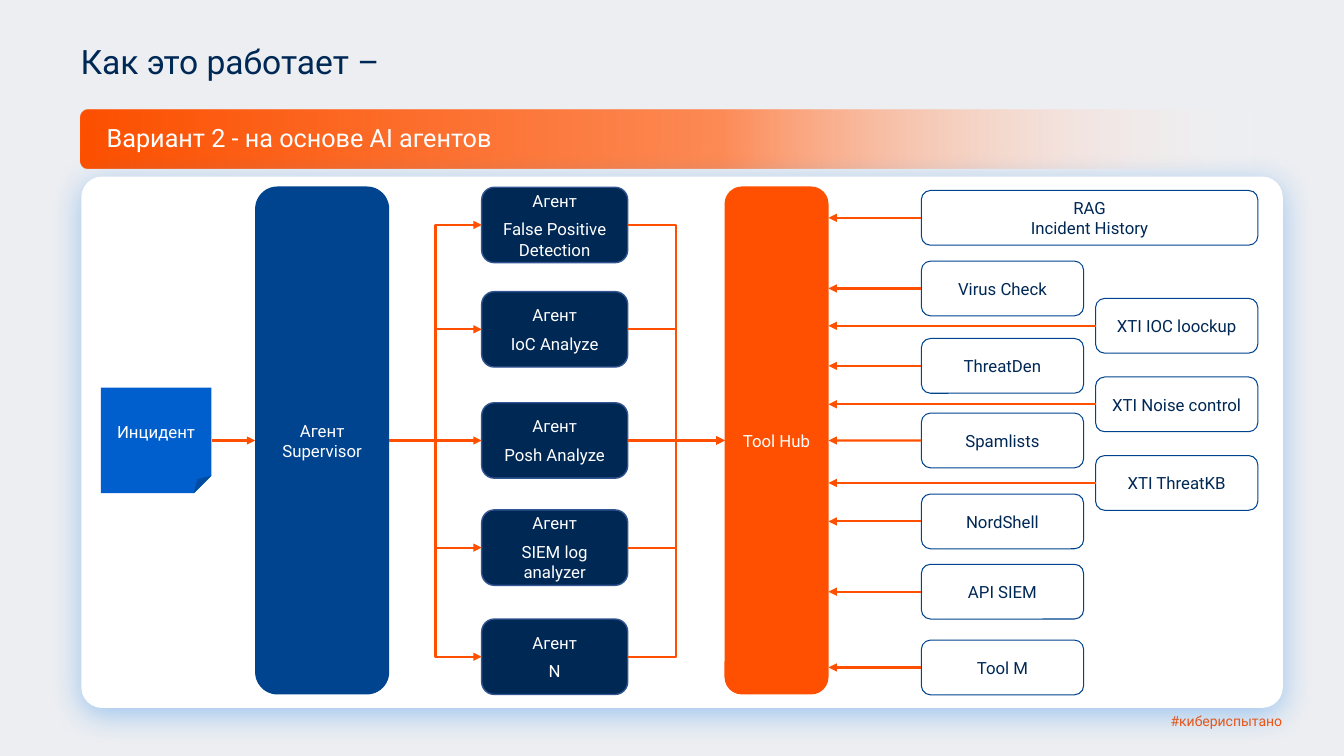
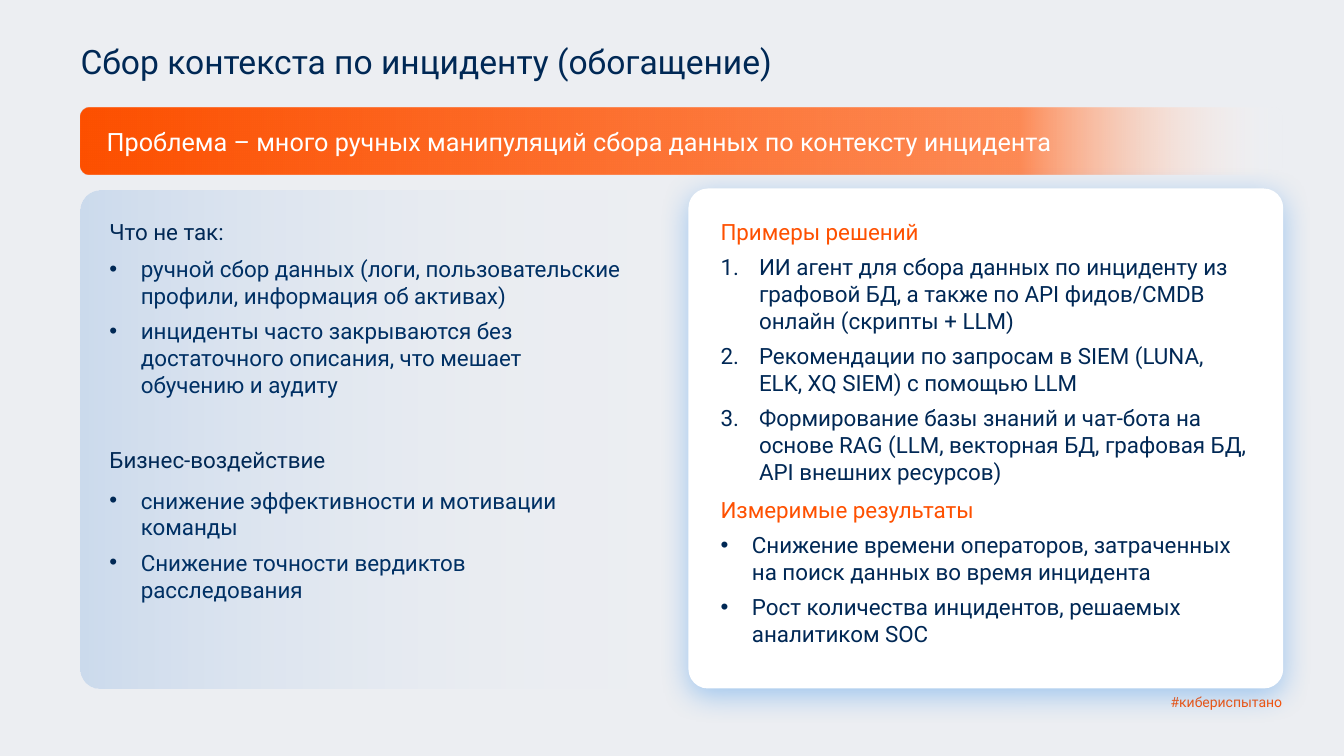
from lxml.etree import SubElement
from pptx import Presentation
from pptx.dml.color import RGBColor
from pptx.enum.shapes import MSO_CONNECTOR as CONN, MSO_SHAPE as SHAPE
from pptx.enum.text import MSO_ANCHOR as ANCHOR, PP_ALIGN as ALIGN
from pptx.oxml.ns import qn
from pptx.util import Cm, Pt

FONT = "Roboto"
ORANGE, PEACH, WHITE = "FE5000", "FE8A55", "FFFFFF"
NAVY, INK, BLUE, BRIGHT = "002855", "003064", "00438F", "005FCC"
rgb = RGBColor.from_string


def box(s, x, y, w, h, text="", shape=None, fill=None, line=None, line_w=1, adj=None,
        grad=None, glow=False, size=12, color=NAVY, align=ALIGN.LEFT, before=0, after=0,
        spacing=None, bullet=None, indent=0.79, lead=None):
    """Add a shape, or a text box when no shape is given; lead colours an unbulleted first line."""
    frame = Cm(x), Cm(y), Cm(w), Cm(h)
    if shape is None:
        sp = s.shapes.add_textbox(*frame)
    else:
        sp = s.shapes.add_shape(shape, *frame)
        sp.shadow.inherit = False
        sp.text_frame.vertical_anchor = ANCHOR.MIDDLE
        if adj:
            sp.adjustments[0] = adj
        if line:
            sp.line.color.rgb = rgb(line)
            sp.line.width = Pt(line_w)
        else:
            sp.line.fill.background()
        if grad:
            sp.fill.gradient()
            sp.fill.gradient_angle = 0
            stops = sp._element.spPr.find(qn("a:gradFill")).find(qn("a:gsLst"))
            stops.clear()
            for pos, tint, alpha in grad:
                gs = SubElement(stops, qn("a:gs"), pos=str(pos * 1000))
                clr = SubElement(gs, qn("a:srgbClr"), val=tint)
                SubElement(clr, qn("a:alpha"), val=str(alpha * 1000))
        else:
            sp.fill.solid()
            sp.fill.fore_color.rgb = rgb(fill)
        if glow:
            effects = sp._element.spPr.find(qn("a:effectLst"))
            shadow = SubElement(effects, qn("a:outerShdw"), blurRad=str(Pt(21.3)),
                                dist=str(Pt(5.2)), dir="5400000", algn="t", rotWithShape="0")
            clr = SubElement(shadow, qn("a:srgbClr"), val="2B8AEA")
            SubElement(clr, qn("a:alpha"), val="40000")

    tf = sp.text_frame
    tf.word_wrap = True
    for i, words in enumerate(text.split("\n") if text else []):
        p = tf.add_paragraph() if i else tf.paragraphs[0]
        is_lead = lead and i == 0
        if bullet and not is_lead:
            pPr = p._p.get_or_add_pPr()
            pPr.set("marL", str(Cm(indent)))
            pPr.set("indent", str(-Cm(indent)))
            SubElement(SubElement(pPr, qn("a:buClr")), qn("a:srgbClr"), val=NAVY)
            if bullet == "1.":
                SubElement(pPr, qn("a:buFont"), typeface="+mj-lt")
                SubElement(pPr, qn("a:buAutoNum"), type="arabicPeriod")
            else:
                SubElement(pPr, qn("a:buFont"), typeface="Arial")
                SubElement(pPr, qn("a:buChar"), char=bullet)
        p.alignment = align
        p.space_before = Pt(before if i else 0)
        p.space_after = Pt(after)
        if spacing:
            p.line_spacing = spacing
        r = p.add_run()
        r.text = words
        r.font.name = FONT
        r.font.size = Pt(size)
        r.font.color.rgb = rgb(lead if is_lead else color)
    return sp


def arrow(s, start, site, end_x, end_y, kind=CONN.STRAIGHT):
    """Add an orange arrow from a side of a shape to a point."""
    c = s.shapes.add_connector(kind, 0, 0, end_x, end_y)
    c.begin_connect(start, site)
    c.line.color.rgb = rgb(ORANGE)
    c.line.width = Pt(1.5)
    SubElement(c.line._get_or_add_ln(), qn("a:tailEnd"), type="triangle")
    SubElement(c._element.spPr, qn("a:effectLst"))
    return c


prs = Presentation()
prs.slide_width, prs.slide_height = Cm(33.87), Cm(19.05)

# Shared frame: background, title, gradient band, footer
frames = [
    # title, band text, band top, band height, band text top, peach stop, footer top
    ("Как это работает –", "Вариант 2 - на основе AI агентов", 2.77, 1.47, 2.95, 53, 17.83),
    ("Сбор контекста по инциденту (обогащение)",
     "Проблема – много ручных манипуляций сбора данных по контексту инцидента",
     2.72, 1.68, 3.05, 78, 17.35),
]
slides = []
for title, band, band_y, band_h, band_text_y, stop, footer_y in frames:
    s = prs.slides.add_slide(prs.slide_layouts[6])
    s.background.fill.solid()
    s.background.fill.fore_color.rgb = rgb("ECEEF2")
    box(s, 1.78, 1.02, 26.29, 1.68, title, size=24, spacing=0.9)
    box(s, 2.03, band_y, 30.3, band_h, shape=SHAPE.ROUNDED_RECTANGLE, adj=0.133,
        grad=[(0, ORANGE, 100), (stop, PEACH, 100), (100, WHITE, 0)])
    box(s, 2.44, band_text_y, 30.12, 1.02, band, size=18, color=WHITE)
    box(s, 26.31, footer_y, 6.25, 0.69, "#кибериспытано", size=10, color=ORANGE,
        align=ALIGN.RIGHT)
    slides.append(s)

panel = dict(shape=SHAPE.ROUNDED_RECTANGLE, adj=0.039)

# Slide 1: agent diagram
s = slides[0]
box(s, 2.05, 4.45, 30.28, 13.39, fill=WHITE, glow=True, **panel)

node = dict(shape=SHAPE.ROUNDED_RECTANGLE, align=ALIGN.CENTER)
incident = box(s, 2.54, 9.77, 2.79, 2.66, "Инцидент", shape=SHAPE.FOLDED_CORNER,
               fill=BRIGHT, color=WHITE, align=ALIGN.CENTER)
supervisor = box(s, 6.43, 4.7, 3.38, 12.8, "Агент Supervisor", fill=BLUE, color=WHITE, **node)
hub = box(s, 18.26, 4.7, 2.62, 12.8, "Tool Hub", fill=ORANGE, color=WHITE, **node)
arrow(s, incident, 3, 0, 0).end_connect(supervisor, 1)

# Agents between supervisor and hub
agents = [(4.72, "False Positive Detection"), (7.35, "IoC Analyze"), (10.15, "Posh Analyze"),
          (12.85, "SIEM log analyzer"), (15.6, "N")]
for y, name in agents:
    agent = box(s, 12.14, y, 3.68, 1.9, "Агент\n" + name, fill=NAVY, line="325491",
                color=WHITE, before=6, **node)
    kind = CONN.STRAIGHT if name == "Posh Analyze" else CONN.ELBOW
    arrow(s, supervisor, 3, 0, 0, kind).end_connect(agent, 1)
    arrow(s, agent, 3, 0, 0, kind).end_connect(hub, 1)

# Tools feeding the hub
NEAR, FAR, NARROW, WIDE = 23.22, 27.61, 4.09, 8.48
tools = [
    (NEAR, 4.8, WIDE, "RAG\nIncident History"),
    (NEAR, 6.58, NARROW, "Virus Check"),
    (FAR, 7.52, NARROW, "XTI IOC loockup"),
    (NEAR, 8.53, NARROW, "ThreatDen"),
    (FAR, 9.5, NARROW, "XTI Noise control"),
    (NEAR, 10.41, NARROW, "Spamlists"),
    (FAR, 11.48, NARROW, "XTI ThreatKB"),
    (NEAR, 12.45, NARROW, "NordShell"),
    (NEAR, 14.22, NARROW, "API SIEM"),
    (NEAR, 16.13, NARROW, "Tool M"),
]
for x, y, w, name in tools:
    tool = box(s, x, y, w, 1.38, name, fill=WHITE, line=BLUE, line_w=0.75, **node)
    link = arrow(s, tool, 1, hub.left + hub.width, tool.top + tool.height // 2)
    if name == "Spamlists":
        link.end_connect(hub, 3)

# Slide 2: problem panel
s = slides[1]
box(s, 2.03, 4.8, 14.91, 12.55, grad=[(0, BRIGHT, 14), (100, WHITE, 0)], **panel)
problems = [
    (5.36, "Что не так:", 6.3, 13.59, 4.57,
     "ручной сбор данных (логи, пользовательские профили, информация об активах)\n"
     "инциденты часто закрываются без достаточного описания, что мешает обучению и аудиту"),
    (11.13, "Бизнес-воздействие", 12.14, 13.13, 3.2,
     "снижение эффективности и мотивации команды\n"
     "Снижение точности вердиктов расследования"),
]
for head_y, head, y, w, h, items in problems:
    box(s, 2.51, head_y, 8, 0.94, head, size=16)
    box(s, 2.51, y, w, h, items, size=16, color=INK, after=6, bullet="•")

# Slide 2: solution panel
box(s, 17.35, 4.75, 14.99, 12.6, fill=WHITE, glow=True, **panel)
solutions = [
    (5.36, 13.87, 7.06, "1.", 0.97,
     "Примеры решений\n"
     "ИИ агент для сбора данных по инциденту из графовой БД, а также по API фидов/CMDB "
     "онлайн (скрипты + LLM)\n"
     "Рекомендации по запросам в SIEM (LUNA, ELK, XQ SIEM) с помощью LLM\n"
     "Формирование базы знаний и чат-бота на основе RAG (LLM, векторная БД, графовая БД, "
     "API внешних ресурсов)"),
    (12.37, 14.1, 4.78, "•", 0.79,
     "Измеримые результаты\n"
     "Снижение времени операторов, затраченных на поиск данных во время инцидента\n"
     "Рост количества инцидентов, решаемых аналитиком SOC"),
]
for y, w, h, bullet, indent, items in solutions:
    box(s, 17.91, y, w, h, items, size=16, after=6, bullet=bullet, indent=indent, lead=ORANGE)

prs.save("out.pptx")
